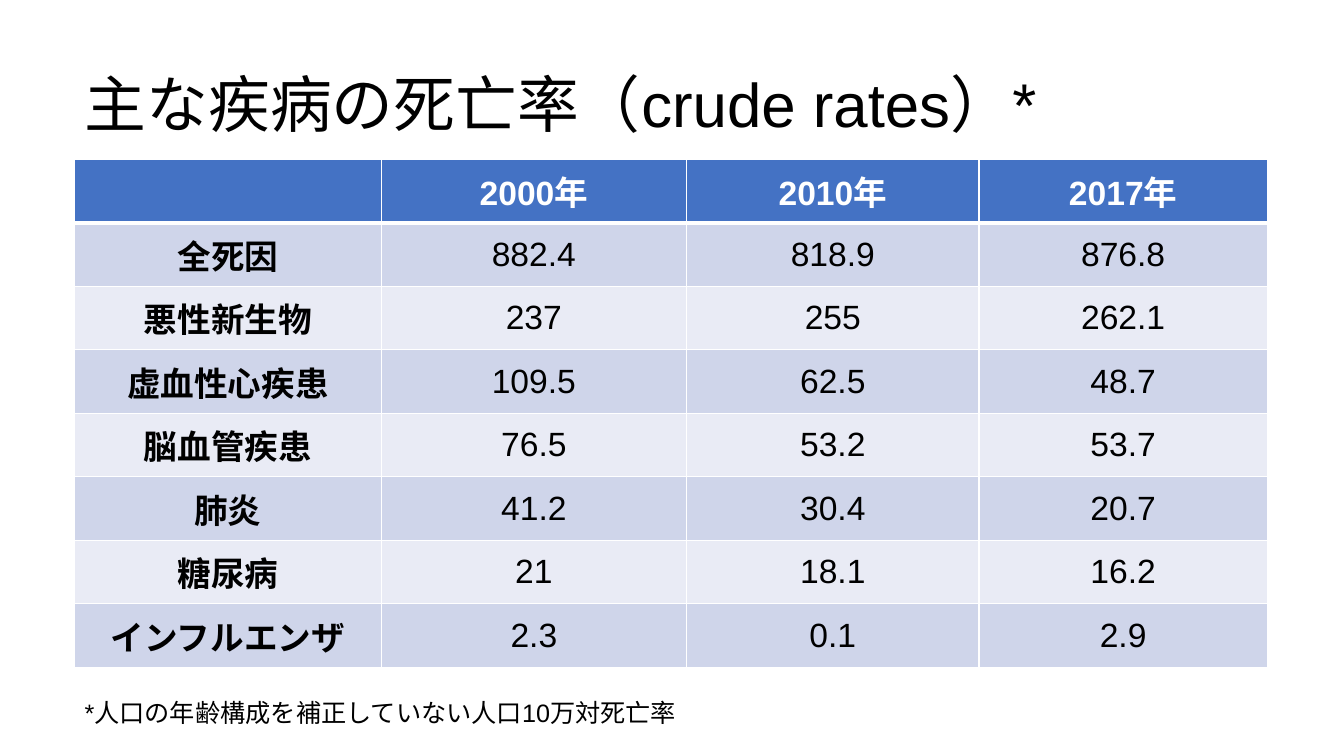
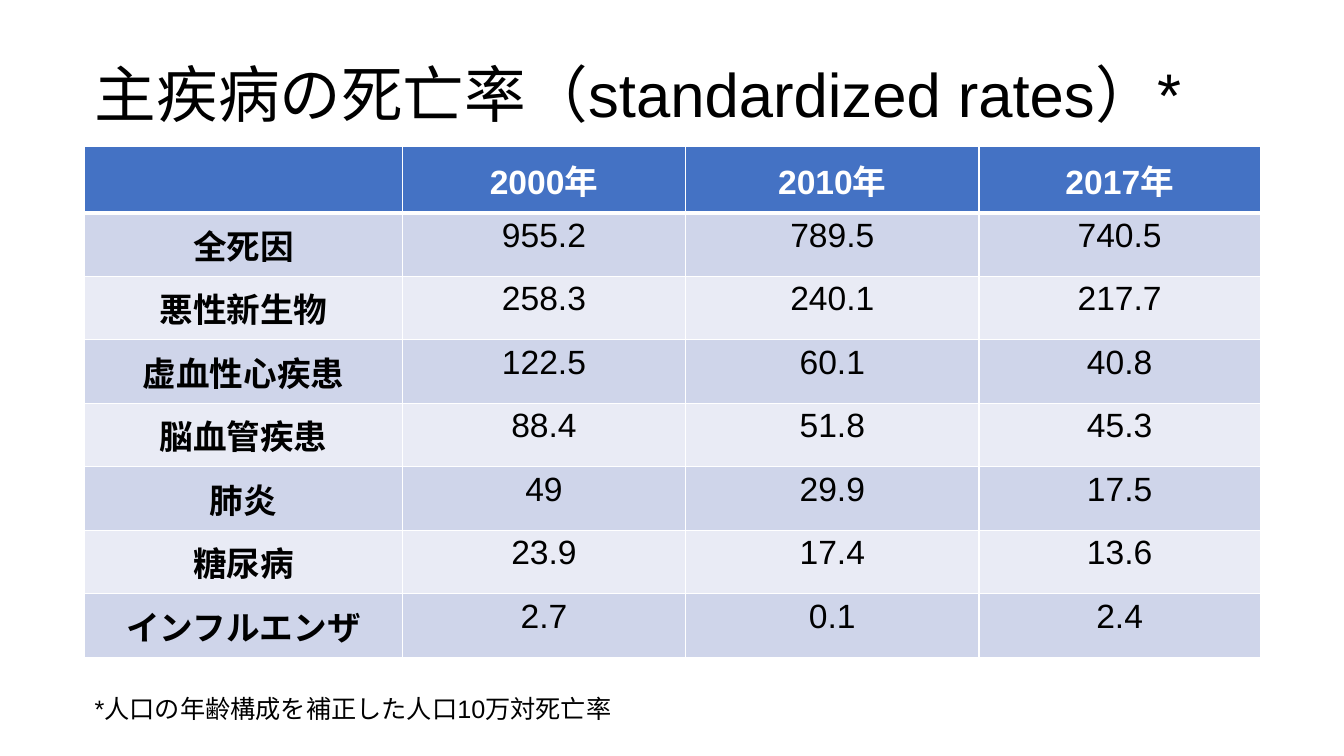
from lxml.etree import fromstring
from pptx import Presentation
from pptx.dml.color import RGBColor
from pptx.enum.text import MSO_ANCHOR, MSO_AUTO_SIZE, PP_ALIGN
from pptx.util import Inches, Pt

# Shared style
COLOR = {"head": "4472C4", "odd": "CFD5EA", "even": "E9EBF5",
         "line": "FFFFFF", "text": "000000"}
FONT = "Arial"
NS = "http://schemas.openxmlformats.org/drawingml/2006/main"

# Content
YEARS = ["", "2000年", "2010年", "2017年"]
CAUSES = ["全死因", "悪性新生物", "虚血性心疾患", "脳血管疾患",
          "肺炎", "糖尿病", "インフルエンザ"]
SLIDES = [
    {"title": [("主な疾病の死亡率（", "Calibri", 44.1), ("crude rates）*", FONT, 44.1)],
     "note": "*人口の年齢構成を補正していない人口10万対死亡率",
     "rates": [("882.4", "818.9", "876.8"), ("237", "255", "262.1"),
               ("109.5", "62.5", "48.7"), ("76.5", "53.2", "53.7"),
               ("41.2", "30.4", "20.7"), ("21", "18.1", "16.2"),
               ("2.3", "0.1", "2.9")],
     "left": 0.74, "title_box": (0.69, 10.94, 0.76), "note_box": (6.87, 6.91, 0.4),
     "top": 1.58, "cols": [3.04, 3.03, 2.9, 2.86], "head": 0.63,
     "anchor": MSO_ANCHOR.MIDDLE},
    {"title": [("主疾病の死亡率（standardized rates）*", FONT, 44)],
     "note": "*人口の年齢構成を補正した人口10万対死亡率",
     "rates": [("955.2", "789.5", "740.5"), ("258.3", "240.1", "217.7"),
               ("122.5", "60.1", "40.8"), ("88.4", "51.8", "45.3"),
               ("49", "29.9", "17.5"), ("23.9", "17.4", "13.6"),
               ("2.7", "0.1", "2.4")],
     "left": 0.84, "title_box": (0.55, 11.66, 0.8), "note_box": (6.83, 6.74, 0.4),
     "top": 1.45, "cols": [3.15, 2.81, 2.91, 2.79], "head": 0.66,
     "anchor": MSO_ANCHOR.TOP},
]
ROW = 0.63


def style(run, size, color="text", bold=False, font=FONT):
    run.font.name, run.font.size, run.font.bold = font, Pt(size), bold
    run.font.color.rgb = RGBColor.from_string(COLOR[color])


def border(cell, row):
    widths = {"L": 1, "R": 1, "T": 3 if row == 1 else 1, "B": 3 if row == 0 else 1}
    props = cell._tc.get_or_add_tcPr()
    for i, (side, width) in enumerate(widths.items()):
        props.insert(i, fromstring(
            f'<a:ln{side} xmlns:a="{NS}" w="{Pt(width)}"><a:solidFill>'
            f'<a:srgbClr val="{COLOR["line"]}"/></a:solidFill></a:ln{side}>'))


def add_title(slide, data):
    title = slide.shapes.title
    top, width, height = data["title_box"]
    title.left, title.top = Inches(data["left"]), Inches(top)
    title.width, title.height = Inches(width), Inches(height)
    frame = title.text_frame
    frame.auto_size, frame.vertical_anchor = MSO_AUTO_SIZE.NONE, MSO_ANCHOR.BOTTOM
    para = frame.paragraphs[0]
    para.alignment, para.line_spacing = PP_ALIGN.LEFT, 0.9
    for text, font, size in data["title"]:
        run = para.add_run()
        run.text = text
        style(run, size, font=font)


def add_rates(slide, data):
    rows = [YEARS] + [[cause, *rates] for cause, rates in zip(CAUSES, data["rates"])]
    table = slide.shapes.add_table(
        len(rows), len(YEARS), Inches(data["left"]), Inches(data["top"]),
        Inches(sum(data["cols"])), Inches(data["head"] + ROW * len(CAUSES))).table
    for col, width in zip(table.columns, data["cols"]):
        col.width = Inches(width)
    for r, values in enumerate(rows):
        table.rows[r].height = Inches(ROW if r else data["head"])
        band = "head" if r == 0 else "odd" if r % 2 else "even"
        for c, value in enumerate(values):
            cell = table.cell(r, c)
            cell.fill.solid()
            cell.fill.fore_color.rgb = RGBColor.from_string(COLOR[band])
            border(cell, r)
            cell.margin_left = cell.margin_right = Inches(0.07)
            cell.margin_top = cell.margin_bottom = Inches(0.04)
            label = r == 0 or c == 0
            cell.vertical_anchor = MSO_ANCHOR.MIDDLE if label else data["anchor"]
            cell.text_frame.text = value
            para = cell.text_frame.paragraphs[0]
            para.alignment = PP_ALIGN.CENTER
            for run in para.runs:
                style(run, 24, "text" if r else "line", label)


def add_note(slide, data):
    top, width, height = data["note_box"]
    box = slide.shapes.add_textbox(Inches(data["left"]), Inches(top),
                                   Inches(width), Inches(height))
    frame = box.text_frame
    frame.word_wrap, frame.auto_size = True, MSO_AUTO_SIZE.SHAPE_TO_FIT_TEXT
    frame.text = data["note"]
    style(frame.paragraphs[0].runs[0], 18)


def main():
    deck = Presentation()
    deck.slide_width, deck.slide_height = Inches(13.33), Inches(7.5)
    for data in SLIDES:
        slide = deck.slides.add_slide(deck.slide_layouts[5])
        add_title(slide, data)
        add_rates(slide, data)
        add_note(slide, data)
    deck.save("out.pptx")


if __name__ == "__main__":
    main()
